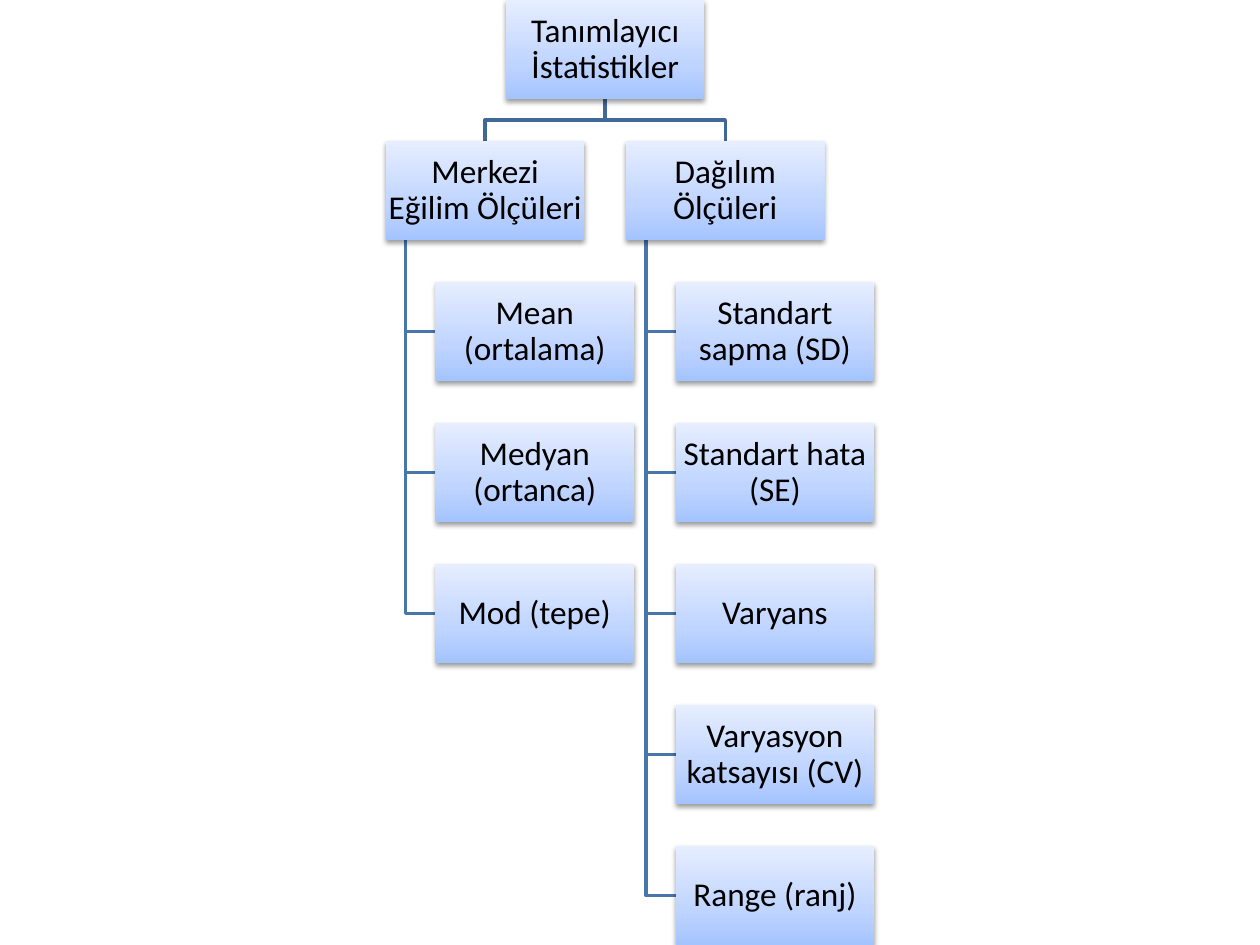
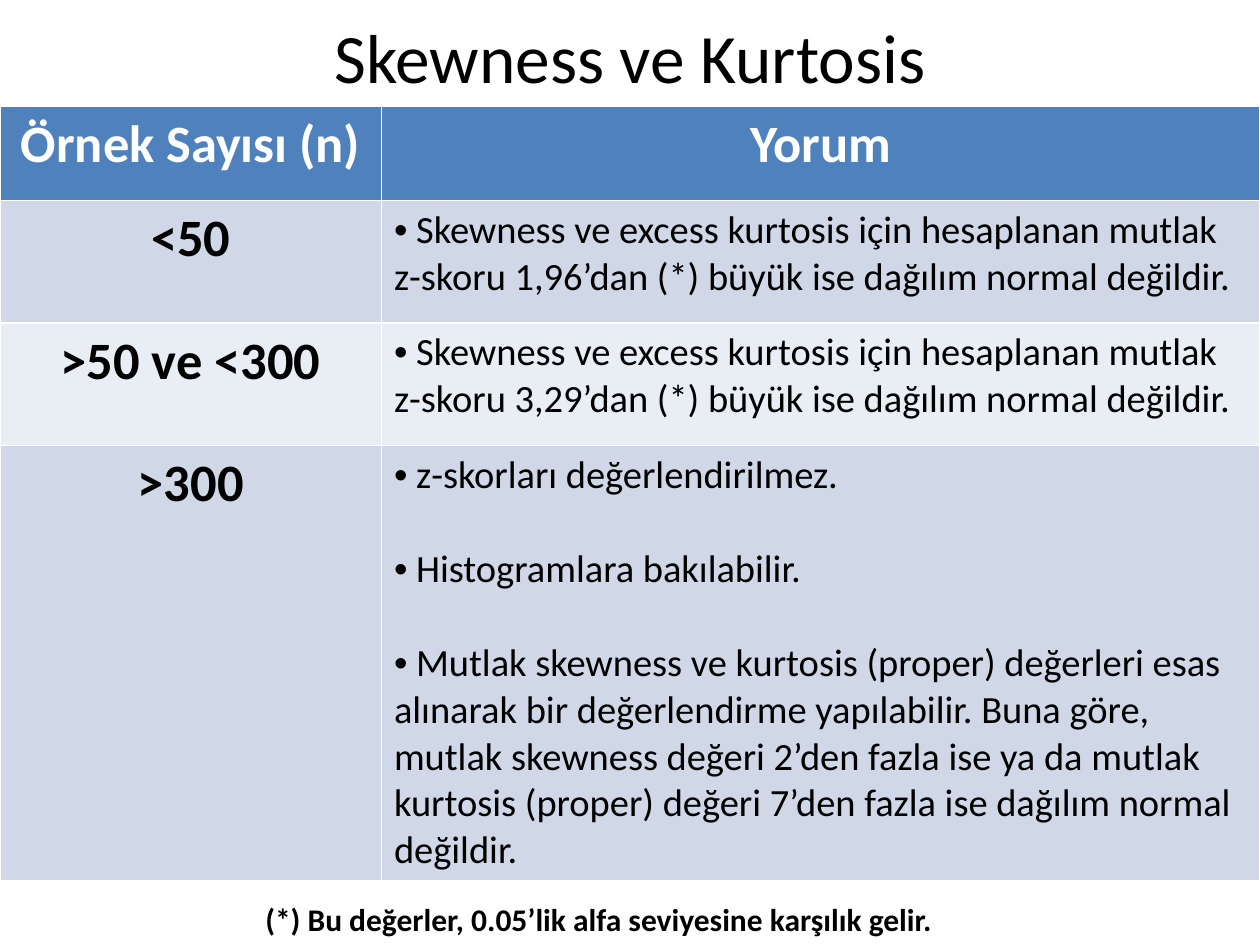
from copy import deepcopy

from lxml import etree
from pptx import Presentation
from pptx.dml.color import RGBColor
from pptx.enum.shapes import MSO_SHAPE
from pptx.enum.text import MSO_ANCHOR, MSO_AUTO_SIZE, PP_ALIGN
from pptx.oxml.ns import qn
from pptx.util import Pt

# Content
ROOT = "Tanımlayıcı İstatistikler"
BRANCHES = [
    ("Merkezi Eğilim Ölçüleri",
     ["Mean (ortalama)", "Medyan (ortanca)", "Mod (tepe)"]),
    ("Dağılım Ölçüleri",
     ["Standart sapma (SD)", "Standart hata (SE)", "Varyans",
      "Varyasyon katsayısı (CV)", "Range (ranj)"]),
]

TITLE = "Skewness ve Kurtosis"
HEADERS = ["Örnek Sayısı (n)", "Yorum"]
Z_SCORE_RULE = ("Skewness ve excess kurtosis için hesaplanan mutlak z-skoru "
                "{}’dan (*) büyük ise dağılım normal değildir.")
SAMPLE_SIZES = [
    ("<50", [Z_SCORE_RULE.format("1,96")]),
    (">50 ve <300", [Z_SCORE_RULE.format("3,29")]),
    (">300", [
        "z-skorları değerlendirilmez.",
        "Histogramlara bakılabilir.",
        "Mutlak skewness ve kurtosis (proper) değerleri esas alınarak bir "
        "değerlendirme yapılabilir. Buna göre, mutlak skewness değeri 2’den "
        "fazla ise ya da mutlak kurtosis (proper) değeri 7’den fazla ise "
        "dağılım normal değildir.",
    ]),
]
FOOTNOTE = "(*) Bu değerler, 0.05’lik alfa seviyesine karşılık gelir."

# Style
FONT = "Calibri"
BLACK = RGBColor(0x00, 0x00, 0x00)
WHITE = RGBColor(0xFF, 0xFF, 0xFF)
ROOT_LINE = RGBColor(0x3F, 0x67, 0x97)
BRANCH_LINE = RGBColor(0x48, 0x75, 0xAC)
BOX_GRADIENT = [
    (0, RGBColor(0xA4, 0xC4, 0xFF)),
    (0.35, RGBColor(0xBF, 0xD4, 0xFF)),
    (1, RGBColor(0xE6, 0xEE, 0xFF)),
]
HEADER_FILL = RGBColor(0x4F, 0x81, 0xBD)
ROW_FILLS = [RGBColor(0xD0, 0xD8, 0xE8), RGBColor(0xE9, 0xED, 0xF4)]
CENTER, LEFT = PP_ALIGN.CENTER, PP_ALIGN.LEFT
MIDDLE = MSO_ANCHOR.MIDDLE
RECTANGLE = MSO_SHAPE.RECTANGLE

# Layout, in points
SLIDE_WIDTH, SLIDE_HEIGHT = 720, 540
BOX_WIDTH, BOX_HEIGHT = 113.4, 56.7
LEVELS = 2 + max(len(measures) for _, measures in BRANCHES)
LEVEL_STEP = (SLIDE_HEIGHT - BOX_HEIGHT) / (LEVELS - 1)
GAP = LEVEL_STEP - BOX_HEIGHT
BRANCH_STEP = BOX_WIDTH + GAP
FIRST_BRANCH_LEFT = 220.5
MEASURE_INDENT = BOX_WIDTH / 4
TRUNK_INDENT = BOX_WIDTH / 10
TABLE_TOP = 60.5
COLUMN_WIDTHS = [218, 502]
ROW_HEIGHTS = [54, 70, 70, 248]
BULLET_GAP = 27


def style_font(paragraph, size, color=BLACK, bold=False, align=LEFT):
    paragraph.alignment = align
    font = paragraph.font
    font.name, font.size, font.bold = FONT, Pt(size), bold
    font.color.rgb = color


def add_path(slide, points, color):
    """Draw an open line through points given in points (pt)."""
    start, *others = [(Pt(x), Pt(y)) for x, y in points]
    builder = slide.shapes.build_freeform(*start)
    builder.add_line_segments(others, close=False)
    shape = builder.convert_to_shape()
    shape.fill.background()
    shape.line.color.rgb = color
    shape.line.width = Pt(2)
    shape.shadow.inherit = False


def fill_with_gradient(shape):
    fill = shape.fill
    fill.gradient()
    fill.gradient_angle = 90
    stop_list = shape._element.spPr.find(".//" + qn("a:gsLst"))
    stop_list.insert(1, deepcopy(stop_list[0]))
    for stop, (position, color) in zip(fill.gradient_stops, BOX_GRADIENT):
        stop.position = position
        stop.color.rgb = color


def add_soft_shadow(shape):
    shape.shadow.inherit = False
    effects = shape._element.spPr.find(qn("a:effectLst"))
    shadow = etree.SubElement(
        effects, qn("a:outerShdw"), blurRad=str(Pt(3.1)), dist=str(Pt(1.6)),
        dir="5400000", rotWithShape="0")
    color = etree.SubElement(shadow, qn("a:srgbClr"), val=str(BLACK))
    etree.SubElement(color, qn("a:alpha"), val="38000")


def add_box(slide, text, left, level):
    shape = slide.shapes.add_shape(
        RECTANGLE, Pt(left), Pt(level * LEVEL_STEP),
        Pt(BOX_WIDTH), Pt(BOX_HEIGHT))
    fill_with_gradient(shape)
    shape.line.fill.background()
    add_soft_shadow(shape)
    frame = shape.text_frame
    frame.word_wrap = True
    frame.vertical_anchor = MIDDLE
    frame.margin_left = frame.margin_right = Pt(0.9)
    frame.margin_top = frame.margin_bottom = Pt(0.9)
    frame.text = text
    paragraph = frame.paragraphs[0]
    style_font(paragraph, 19, align=CENTER)
    paragraph.line_spacing = 0.9


def build_tree_slide(presentation):
    slide = presentation.slides.add_slide(presentation.slide_layouts[6])
    root_left = FIRST_BRANCH_LEFT + BRANCH_STEP * (len(BRANCHES) - 1) / 2
    root_middle = root_left + BOX_WIDTH / 2
    fork_y = BOX_HEIGHT + GAP / 2
    boxes = [(ROOT, root_left, 0)]
    for index, (branch, measures) in enumerate(BRANCHES):
        left = FIRST_BRANCH_LEFT + index * BRANCH_STEP
        middle = left + BOX_WIDTH / 2
        add_path(slide, [(root_middle, BOX_HEIGHT), (root_middle, fork_y),
                         (middle, fork_y), (middle, LEVEL_STEP)], ROOT_LINE)
        boxes.append((branch, left, 1))
        trunk_x, measure_left = left + TRUNK_INDENT, left + MEASURE_INDENT
        for level, measure in enumerate(measures, start=2):
            measure_y = level * LEVEL_STEP + BOX_HEIGHT / 2
            add_path(slide, [(trunk_x, LEVEL_STEP + BOX_HEIGHT),
                             (trunk_x, measure_y),
                             (measure_left, measure_y)], BRANCH_LINE)
            boxes.append((measure, measure_left, level))
    for box in boxes:
        add_box(slide, *box)


def fill_cell(cell, text, fill, color=BLACK):
    cell.fill.solid()
    cell.fill.fore_color.rgb = fill
    cell.text = text
    style_font(cell.text_frame.paragraphs[0], 30, color, True, CENTER)


def fill_bullet_cell(cell, comments, fill):
    cell.fill.solid()
    cell.fill.fore_color.rgb = fill
    cell.text = "\n".join(" " + comment for comment in comments)
    for index, paragraph in enumerate(cell.text_frame.paragraphs):
        style_font(paragraph, 22)
        paragraph.space_before = Pt(BULLET_GAP if index else 0)
        properties = paragraph._p.get_or_add_pPr()
        properties.set("marL", "0")
        properties.set("indent", "0")
        etree.SubElement(properties, qn("a:buFont"), typeface="Arial")
        etree.SubElement(properties, qn("a:buChar"), char="•")


def add_title(slide, text):
    title = slide.shapes.title
    title.left, title.top = Pt(36), Pt(15)
    title.width, title.height = Pt(SLIDE_WIDTH - 72), Pt(34)
    frame = title.text_frame
    frame.text = text
    frame.auto_size = MSO_AUTO_SIZE.NONE
    frame.vertical_anchor = MIDDLE
    style_font(frame.paragraphs[0], 39.6, align=CENTER)


def add_footnote(slide, text):
    box = slide.shapes.add_textbox(Pt(144.5), Pt(511), Pt(398), Pt(29))
    frame = box.text_frame
    frame.word_wrap = False
    frame.auto_size = MSO_AUTO_SIZE.SHAPE_TO_FIT_TEXT
    frame.text = text
    style_font(frame.paragraphs[0], 18, bold=True)


def build_table_slide(presentation):
    slide = presentation.slides.add_slide(presentation.slide_layouts[5])
    add_title(slide, TITLE)
    table = slide.shapes.add_table(
        len(ROW_HEIGHTS), len(COLUMN_WIDTHS), 0, Pt(TABLE_TOP),
        Pt(sum(COLUMN_WIDTHS)), Pt(sum(ROW_HEIGHTS))).table
    for column, width in zip(table.columns, COLUMN_WIDTHS):
        column.width = Pt(width)
    for row, height in zip(table.rows, ROW_HEIGHTS):
        row.height = Pt(height)
    for column, header in enumerate(HEADERS):
        fill_cell(table.cell(0, column), header, HEADER_FILL, WHITE)
    for row, (sample_size, comments) in enumerate(SAMPLE_SIZES, start=1):
        fill = ROW_FILLS[(row - 1) % len(ROW_FILLS)]
        fill_cell(table.cell(row, 0), sample_size, fill)
        fill_bullet_cell(table.cell(row, 1), comments, fill)
    add_footnote(slide, FOOTNOTE)


def main():
    presentation = Presentation()
    presentation.slide_width = Pt(SLIDE_WIDTH)
    presentation.slide_height = Pt(SLIDE_HEIGHT)
    build_tree_slide(presentation)
    build_table_slide(presentation)
    presentation.save("out.pptx")


if __name__ == "__main__":
    main()
